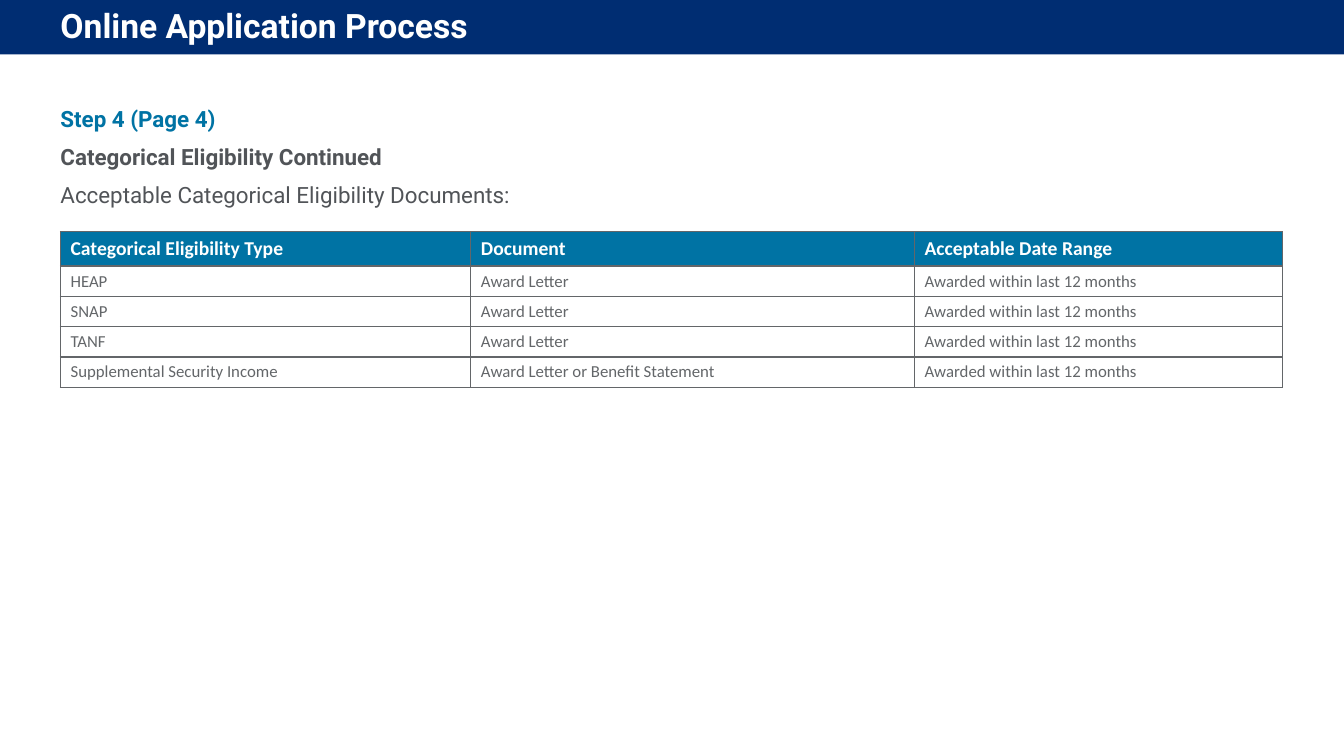
from lxml.etree import SubElement
from pptx import Presentation
from pptx.dml.color import RGBColor
from pptx.enum.shapes import MSO_SHAPE
from pptx.enum.text import MSO_ANCHOR
from pptx.oxml.ns import qn
from pptx.util import Inches, Pt

NAVY = RGBColor(0x00, 0x2D, 0x72)
BLUE = RGBColor(0x00, 0x73, 0xA4)
SLATE = RGBColor(0x51, 0x54, 0x58)
GRAY = RGBColor(0x63, 0x66, 0x69)
WHITE = RGBColor(0xFF, 0xFF, 0xFF)

deck = Presentation()
deck.slide_width = Inches(13.33)
deck.slide_height = Inches(7.5)
slide = deck.slides.add_slide(deck.slide_layouts[6])

LEFT = Inches(0.6)
WIDTH = Inches(12.12)
BAND = Inches(0.54)


def style(para, face, size, color, bold):
    font = para.font
    font.name, font.size, font.bold = face, Pt(size), bold
    font.color.rgb = color


def add_text(top, width, height, anchor, lines):
    frame = slide.shapes.add_textbox(LEFT, top, width, height).text_frame
    frame.word_wrap = True
    frame.vertical_anchor = anchor
    frame.margin_left = frame.margin_right = 0
    frame.margin_top = frame.margin_bottom = 0
    for i, (text, size, color, bold) in enumerate(lines):
        para = frame.add_paragraph() if i else frame.paragraphs[0]
        para.text = text
        para.line_spacing = 0.9
        para.space_before = Pt(10)
        style(para, "Roboto", size, color, bold)


# Title band
band = slide.shapes.add_shape(MSO_SHAPE.RECTANGLE, 0, 0, deck.slide_width, BAND)
band.shadow.inherit = False
band.fill.solid()
band.fill.fore_color.rgb = NAVY
band.line.fill.background()
add_text(0, WIDTH, BAND, MSO_ANCHOR.MIDDLE,
         [("Online Application Process", 24, WHITE, True)])

# Step heading and lead-in
add_text(Inches(1.07), Inches(5.76), Inches(6.04), MSO_ANCHOR.TOP, [
    ("Step 4 (Page 4)", 16, BLUE, True),
    ("Categorical Eligibility Continued", 16, SLATE, True),
    ("Acceptable Categorical Eligibility Documents:", 16, SLATE, False),
])

# Table of documents
RANGE = "Awarded within last 12 months"
rows = [
    ("Categorical Eligibility Type", "Document", "Acceptable Date Range"),
    ("HEAP", "Award Letter", RANGE),
    ("SNAP", "Award Letter", RANGE),
    ("TANF", "Award Letter", RANGE),
    ("Supplemental Security Income", "Award Letter or Benefit Statement", RANGE),
]
grid = slide.shapes.add_table(len(rows), 3, LEFT, Inches(2.3), WIDTH,
                              Inches(1.53)).table
grid.first_row = grid.horz_banding = False
for col, width in zip(grid.columns, (4.07, 4.4, 3.65)):
    col.width = Inches(width)

for r, row in enumerate(rows):
    head = r == 0
    grid.rows[r].height = Inches(0.34 if head else 0.3)
    for c, text in enumerate(row):
        cell = grid.cell(r, c)
        cell.text = text
        cell.vertical_anchor = MSO_ANCHOR.MIDDLE
        style(cell.text_frame.paragraphs[0], "Calibri", 14 if head else 12,
              WHITE if head else GRAY, head)
        # Borders go ahead of the fill in the cell's XML
        props = cell._tc.get_or_add_tcPr()
        for side in ("a:lnL", "a:lnR", "a:lnT", "a:lnB"):
            line = SubElement(props, qn(side), w=str(Pt(1)))
            fill = SubElement(line, qn("a:solidFill"))
            SubElement(fill, qn("a:srgbClr"), val=str(GRAY))
        if head:
            cell.fill.solid()
            cell.fill.fore_color.rgb = BLUE
        else:
            cell.fill.background()

deck.save("out.pptx")
